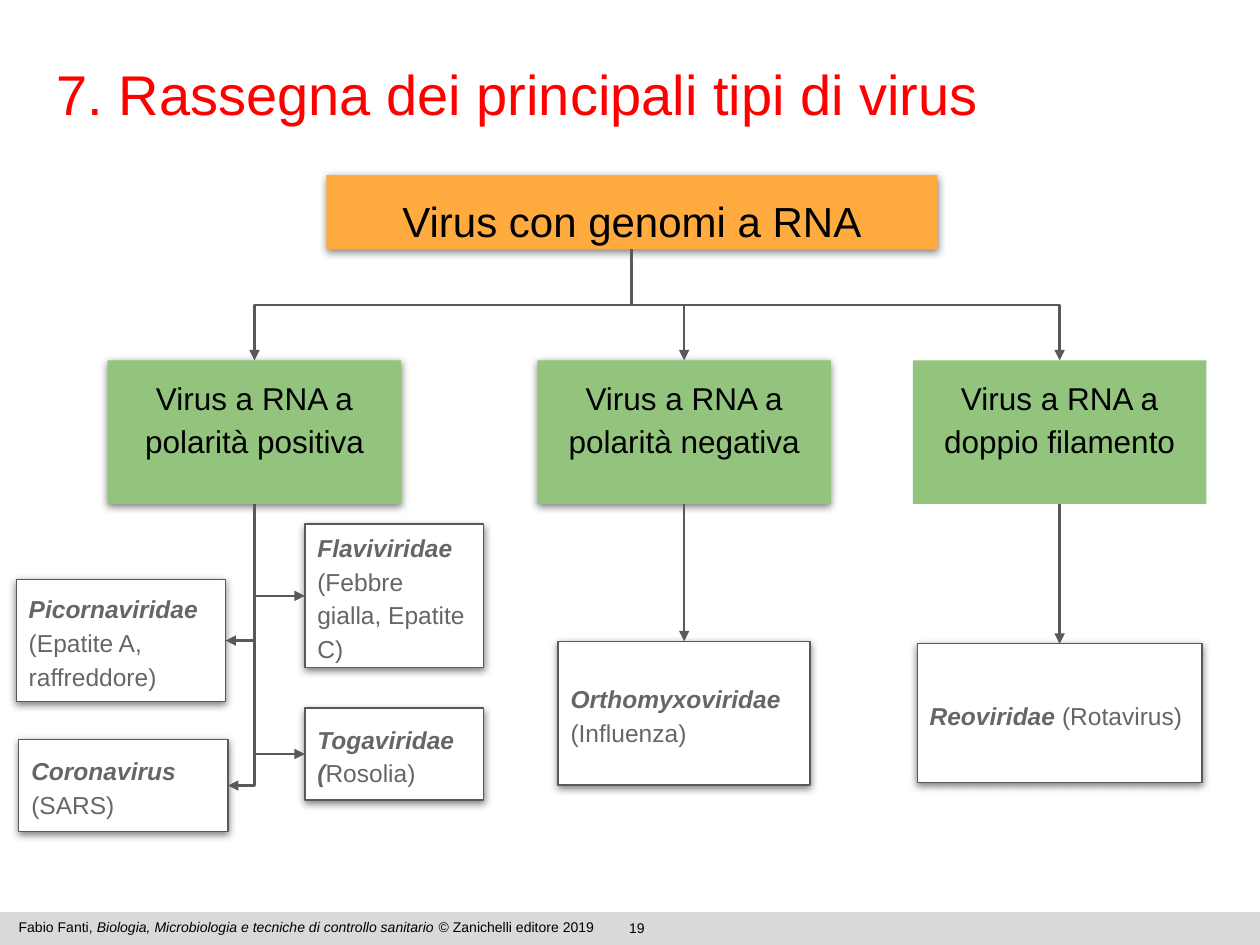
from lxml.etree import SubElement
from pptx import Presentation
from pptx.dml.color import RGBColor
from pptx.enum.shapes import MSO_CONNECTOR, MSO_SHAPE
from pptx.enum.text import MSO_ANCHOR, MSO_AUTO_SIZE, PP_ALIGN
from pptx.oxml.ns import qn
from pptx.util import Inches, Pt

BLACK, RED, GRAY, LINE = "000000", "FF0000", "666666", "595959"
WHITE, ORANGE, GREEN, BAND = "FFFFFF", "FFAB40", "93C47D", "D9D9D9"


def color(value):
    """Turn a hex string into a colour."""
    return RGBColor.from_string(value)


class VirusSlide:
    """Hold the style and the current slide, and draw each kind of element."""

    font_name = "Arial"

    def __init__(self, presentation):
        """Add a title-only slide."""
        self.slide = presentation.slides.add_slide(presentation.slide_layouts[5])

    def format_text(self, frame, runs, size, text_color, align=PP_ALIGN.LEFT,
                    spacing=1.0, anchor=MSO_ANCHOR.TOP, margin=0.1):
        """Fill a text frame with runs of (text, bold, italic)."""
        frame.word_wrap = True
        frame.auto_size = MSO_AUTO_SIZE.NONE
        frame.vertical_anchor = anchor
        frame.margin_left = frame.margin_right = Inches(0.1)
        frame.margin_top = frame.margin_bottom = Inches(margin)
        paragraph = frame.paragraphs[0]
        paragraph.alignment = align
        paragraph.line_spacing = spacing
        paragraph.font.name = self.font_name
        paragraph.font.size = Pt(size)
        paragraph.font.color.rgb = color(text_color)
        for text, bold, italic in runs:
            run = paragraph.add_run()
            run.text = text
            run.font.bold = bold
            run.font.italic = italic

    def title(self, text, left, top, width, height):
        """Place and format the title placeholder."""
        title = self.slide.shapes.title
        title.left, title.top = Inches(left), Inches(top)
        title.width, title.height = Inches(width), Inches(height)
        self.format_text(title.text_frame, [(text, False, False)], 32, RED, margin=0.05)

    def rectangle(self, left, top, width, height, fill, outline=None, shadow=True):
        """Draw a rectangle with an optional outline and soft shadow."""
        shape = self.slide.shapes.add_shape(
            MSO_SHAPE.RECTANGLE, Inches(left), Inches(top), Inches(width), Inches(height))
        shape.fill.solid()
        shape.fill.fore_color.rgb = color(fill)
        if outline:
            shape.line.color.rgb = color(outline)
            shape.line.width = Pt(0.75)
        else:
            shape.line.fill.background()
        shape.shadow.inherit = False
        if shadow:
            effects = shape._element.spPr.find(qn("a:effectLst"))
            outer = SubElement(effects, qn("a:outerShdw"), blurRad=str(Pt(4.5)),
                               dist=str(Pt(1.5)), dir="5400000", algn="bl", rotWithShape="0")
            tone = SubElement(outer, qn("a:srgbClr"), val=BLACK)
            SubElement(tone, qn("a:alpha"), val="50000")
        return shape

    def heading(self, text, left, top, width, height, fill, size, shadow=True):
        """Draw a filled group box with centred text."""
        shape = self.rectangle(left, top, width, height, fill, shadow=shadow)
        self.format_text(shape.text_frame, [(text, False, False)], size, BLACK,
                         PP_ALIGN.CENTER, 1.15)

    def family(self, name, disease, left, top, width, height):
        """Draw an outlined box with a virus family and its disease."""
        shape = self.rectangle(left, top, width, height, WHITE, LINE)
        runs = [(name, True, True), (disease, False, False)]
        self.format_text(shape.text_frame, runs, 14, GRAY, spacing=1.15,
                         anchor=MSO_ANCHOR.MIDDLE)

    def caption(self, runs, left, top, width, height, align=PP_ALIGN.LEFT):
        """Add a line of footer text."""
        box = self.slide.shapes.add_textbox(
            Inches(left), Inches(top), Inches(width), Inches(height))
        self.format_text(box.text_frame, runs, 8, BLACK, align, margin=0.05)

    def connector(self, kind, start, end, arrow="a:tailEnd"):
        """Draw a line with a triangle at its start or end."""
        connector = self.slide.shapes.add_connector(
            kind, *(Inches(value) for value in (*start, *end)))
        connector.line.color.rgb = color(LINE)
        connector.line.width = Pt(1.5)
        properties = connector._element.spPr
        SubElement(properties.find(qn("a:ln")), qn(arrow), type="triangle")
        SubElement(properties, qn("a:effectLst"))
        return properties

    def arrow_down(self, x, top, bottom):
        """Draw a straight vertical arrow."""
        self.connector(MSO_CONNECTOR.STRAIGHT, (x, top), (x, bottom))

    def branch(self, start, end):
        """Draw an elbow arrow that goes down, across and down."""
        middle_x, middle_y = (start[0] + end[0]) / 2, (start[1] + end[1]) / 2
        half_width, half_height = (end[1] - start[1]) / 2, (start[0] - end[0]) / 2
        properties = self.connector(
            MSO_CONNECTOR.ELBOW,
            (middle_x - half_width, middle_y - half_height),
            (middle_x + half_width, middle_y + half_height))
        properties.find(qn("a:xfrm")).set("rot", "5400000")

    def side_arrow(self, tip, trunk):
        """Draw a one-bend arrow from a vertical trunk to a box side."""
        properties = self.connector(MSO_CONNECTOR.ELBOW, tip, trunk, "a:headEnd")
        properties.find(qn("a:prstGeom")).set("prst", "bentConnector2")


def main():
    """Build and save the slide."""
    presentation = Presentation()
    presentation.slide_width, presentation.slide_height = Inches(10), Inches(7.5)
    slide = VirusSlide(presentation)

    slide.rectangle(0, 7.24, 10, 0.26, BAND, shadow=False)
    slide.caption([("19", False, False)], 3.94, 7.25, 2.23, 0.17, PP_ALIGN.CENTER)
    slide.caption([
        ("Fabio Fanti, ", False, False),
        ("Biologia, Microbiologia e tecniche di controllo sanitario", False, True),
        (" © Zanichelli editore 2019", False, False),
    ], 0.05, 7.24, 5.04, 0.24)
    slide.title("7. Rassegna dei principali tipi di virus", 0.35, 0.42, 9.65, 0.97)

    root = (5.01, 1.98)
    group_top, group_width, group_bottom = 2.86, 2.33, 4
    slide.heading("Virus con genomi a RNA", 2.59, 1.39, 4.85, 0.59, ORANGE, 24)
    groups = [
        ("Virus a RNA a polarità positiva", 2.02, True),
        ("Virus a RNA a polarità negativa", 5.43, True),
        ("Virus a RNA a doppio filamento", 8.41, False),
    ]
    for text, center, shadow in groups:
        slide.heading(text, center - group_width / 2, group_top, group_width,
                      group_bottom - group_top, GREEN, 18, shadow)
        slide.branch(root, (center, group_top))

    trunk = (groups[0][1], group_bottom)
    positive_families = [
        ("Picornaviridae ", "(Epatite A, raffreddore)", 0.13, 4.6, 1.66, 0.97),
        ("Coronavirus ", "(SARS)", 0.15, 5.87, 1.66, 0.73),
        ("Flaviviridae ", "(Febbre gialla, Epatite C)", 2.42, 4.16, 1.42, 1.14),
        ("Togaviridae (", "Rosolia)", 2.42, 5.62, 1.42, 0.73),
    ]
    for name, disease, left, top, width, height in positive_families:
        slide.family(name, disease, left, top, width, height)
        side = left if left > trunk[0] else left + width
        slide.side_arrow((side, top + height / 2), trunk)

    other_families = [
        ("Orthomyxoviridae", " (Influenza)", 5.43, 5.09, 2, 1.14),
        ("Reoviridae ", "(Rotavirus)", 8.41, 5.11, 2.26, 1.1),
    ]
    for name, disease, center, top, width, height in other_families:
        slide.family(name, disease, center - width / 2, top, width, height)
        slide.arrow_down(center, group_bottom, top)

    presentation.save("out.pptx")


if __name__ == "__main__":
    main()
